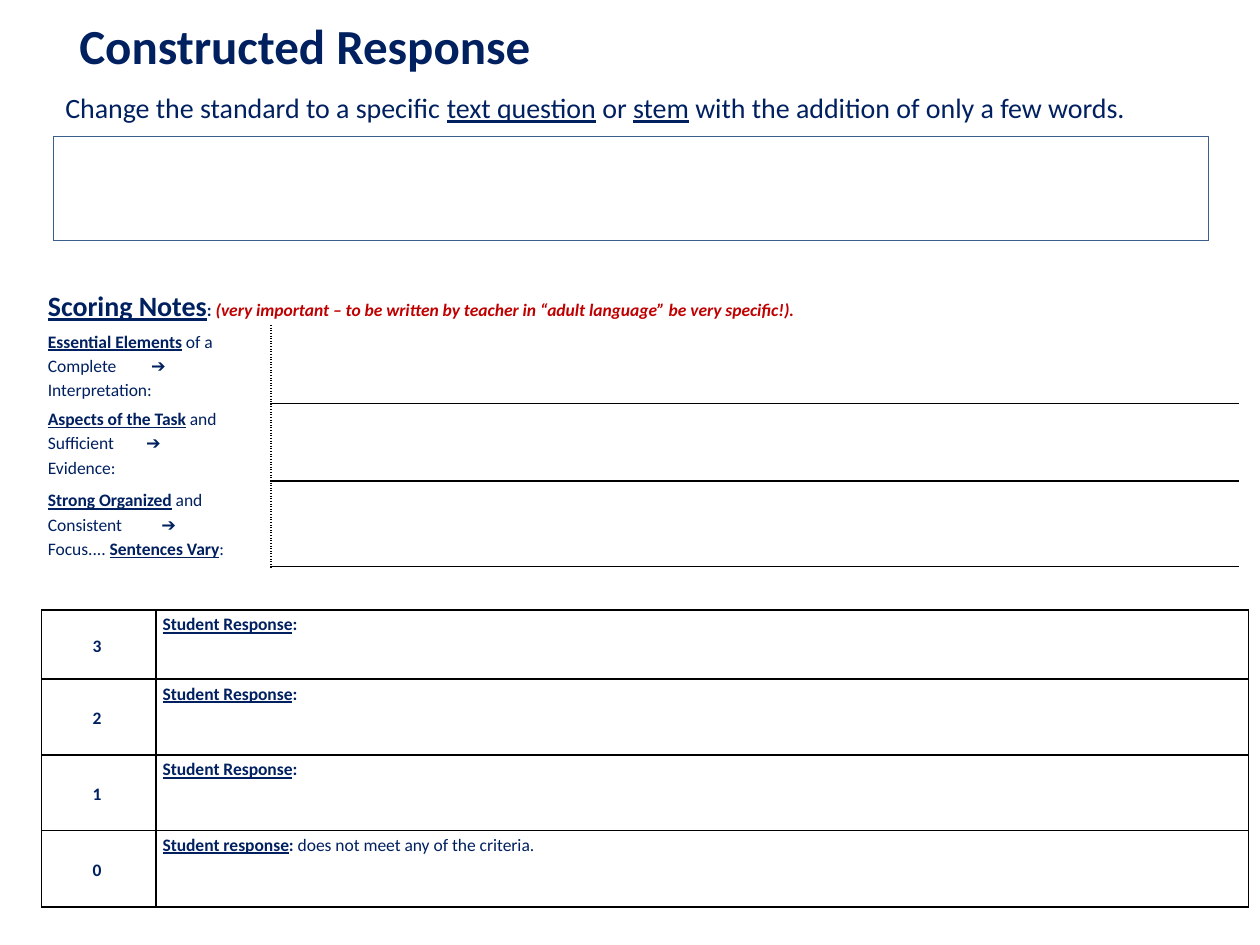
from lxml.etree import SubElement
from pptx import Presentation
from pptx.dml.color import RGBColor
from pptx.enum.dml import MSO_LINE
from pptx.enum.shapes import MSO_SHAPE
from pptx.enum.text import MSO_ANCHOR, PP_ALIGN
from pptx.oxml.ns import qn
from pptx.util import Inches, Pt

NAVY, RED, BLACK, WHITE = "002060", "C00000", "000000", "FFFFFF"
BOLD = {"bold": True}
KEY = {"bold": True, "underline": True}
SOLID, DOT = "solid", "dot"


def color(code):
    return RGBColor.from_string(code)


class Page:
    def __init__(self, slide, font="Calibri", ink=NAVY):
        self.slide, self.font, self.ink = slide, font, ink

    def add_runs(self, para, runs, size):
        """Fill a paragraph from (text, format) pairs; a newline breaks the line."""
        for text, form in runs:
            for i, part in enumerate(text.split("\n")):
                if i:
                    para.add_line_break()
                run = para.add_run()
                run.text = part
                look = {"name": self.font, "size": Pt(size), **form}
                ink = look.pop("ink", self.ink)
                for name, value in look.items():
                    setattr(run.font, name, value)
                run.font.color.rgb = color(ink)

    def title(self, text, box, size):
        shape = self.slide.shapes.title
        for name, value in zip(("left", "top", "width", "height"), box):
            setattr(shape, name, Inches(value))
        frame = shape.text_frame
        frame.word_wrap = True
        frame.vertical_anchor = MSO_ANCHOR.TOP
        frame.paragraphs[0].alignment = PP_ALIGN.LEFT
        self.add_runs(frame.paragraphs[0], [(text, BOLD)], size)

    def text(self, runs, box, size):
        frame = self.slide.shapes.add_textbox(*map(Inches, box)).text_frame
        frame.word_wrap = True
        self.add_runs(frame.paragraphs[0], runs, size)

    def frame(self, box, line):
        shape = self.slide.shapes.add_shape(MSO_SHAPE.RECTANGLE, *map(Inches, box))
        shape.shadow.inherit = False
        shape.fill.background()
        shape.line.color.rgb = color(line)
        shape.line.width = Pt(0.25)
        shape.line.dash_style = MSO_LINE.ROUND_DOT

    def table(self, spot, cols, rows, pad):
        """Add a plain white table whose cells share one padding."""
        size = (sum(cols), sum(rows))
        grid = self.slide.shapes.add_table(
            len(rows), len(cols), *map(Inches, (*spot, *size))).table
        grid.first_row = grid.horz_banding = False
        for col, width in zip(grid.columns, cols):
            col.width = Inches(width)
        for row, height in zip(grid.rows, rows):
            row.height = Inches(height)
        for cell in grid.iter_cells():
            cell.margin_left = cell.margin_right = Inches(0.05)
            cell.margin_top = cell.margin_bottom = Inches(pad)
            cell.fill.solid()
            cell.fill.fore_color.rgb = color(WHITE)
        return grid

    def cell(self, cell, paras, size=10, anchor=MSO_ANCHOR.MIDDLE, align=None, tab=None):
        cell.vertical_anchor = anchor
        frame = cell.text_frame
        for i, runs in enumerate(paras):
            para = frame.add_paragraph() if i else frame.paragraphs[0]
            para.line_spacing = 1.15
            para.alignment = align
            if tab:
                stops = SubElement(para._p.get_or_add_pPr(), qn("a:tabLst"))
                SubElement(stops, qn("a:tab"), pos=str(Inches(tab)), algn="l")
            self.add_runs(para, runs, size)

    def border(self, cell, sides):
        """Draw cell borders from a dict of side (L, R, T, B) to dash."""
        props = cell._tc.get_or_add_tcPr()
        order = [side for side in "LRTB" if side in sides]
        for i, side in enumerate(order):
            line = SubElement(props, qn("a:ln" + side), w=str(Pt(1)))
            fill = SubElement(line, qn("a:solidFill"))
            SubElement(fill, qn("a:srgbClr"), val=BLACK)
            SubElement(line, qn("a:prstDash"), val=sides[side])
            props.insert(i, line)


def notes(page):
    """Scoring notes: a heading row, then labels beside ruled writing space."""
    labels = [
        (0.82, [[("Essential Elements", KEY),
                 (" of a Complete\t➔\nInterpretation:", {})]]),
        (0.78, [[("Aspects of the Task", KEY),
                 (" and Sufficient\t➔\nEvidence:", {})]]),
        (0.9, [[("Strong Organized", KEY), (" and Consistent\t➔", {})],
               [("Focus.... ", {}), ("Sentences Vary", KEY), (":", {})]]),
    ]
    grid = page.table((0.33, 2.24), (0.69, 1.13, 7.68), (0.34, 0.6, 0.61, 0.68), 0.02)
    grid.cell(0, 0).merge(grid.cell(0, 2))
    page.cell(grid.cell(0, 0), [[
        ("Scoring Notes", {**KEY, "size": Pt(16)}),
        (": ", BOLD),
        ("(very important – to be written by teacher in “adult language” "
         "be very specific!).", {"bold": True, "italic": True, "ink": RED}),
    ]])
    for row, (tab, paras) in enumerate(labels, 1):
        label, space = grid.cell(row, 0), grid.cell(row, 2)
        label.merge(grid.cell(row, 1))
        page.cell(label, paras, tab=tab)
        page.border(label, {"R": DOT})
        rules = {"L": DOT, "B": SOLID}
        if row > 1:
            rules["T"] = SOLID
        page.border(space, rules)


def scores(page):
    """Score levels from 3 to 0, each with room for a response."""
    full = [("Student Response", KEY), (":", BOLD)]
    none = [("Student response", KEY), (": ", BOLD),
            ("does not meet any of the criteria.", {})]
    grid = page.table((0.33, 4.84), (0.91, 0.84, 7.83), (0.55, 0.6, 0.6, 0.61), 0.01)
    for row, runs in enumerate([full, full, full, none]):
        mark, reply = grid.cell(row, 0), grid.cell(row, 1)
        reply.merge(grid.cell(row, 2))
        page.cell(mark, [[(f"{3 - row} ", BOLD)]], align=PP_ALIGN.CENTER)
        page.cell(reply, [runs], anchor=MSO_ANCHOR.TOP)
        for col in range(3):
            page.border(grid.cell(row, col), dict.fromkeys("LRTB", SOLID))


def main():
    deck = Presentation()
    deck.slide_width, deck.slide_height = Inches(10), Inches(7.5)
    page = Page(deck.slides.add_slide(deck.slide_layouts[5]))
    page.title("Constructed Response", (0.53, 0.07, 4.33, 0.57), 28)
    under = {"underline": True}
    page.text([
        ("Change the standard to a specific ", {}), ("text question", under),
        (" or ", {}), ("stem", under),
        (" with the addition of only a few words.", {}),
    ], (0.42, 0.67, 8.67, 0.37), 16)
    page.frame((0.42, 1.08, 9.17, 0.83), "3A5F8C")
    notes(page)
    scores(page)
    deck.save("out.pptx")


if __name__ == "__main__":
    main()
